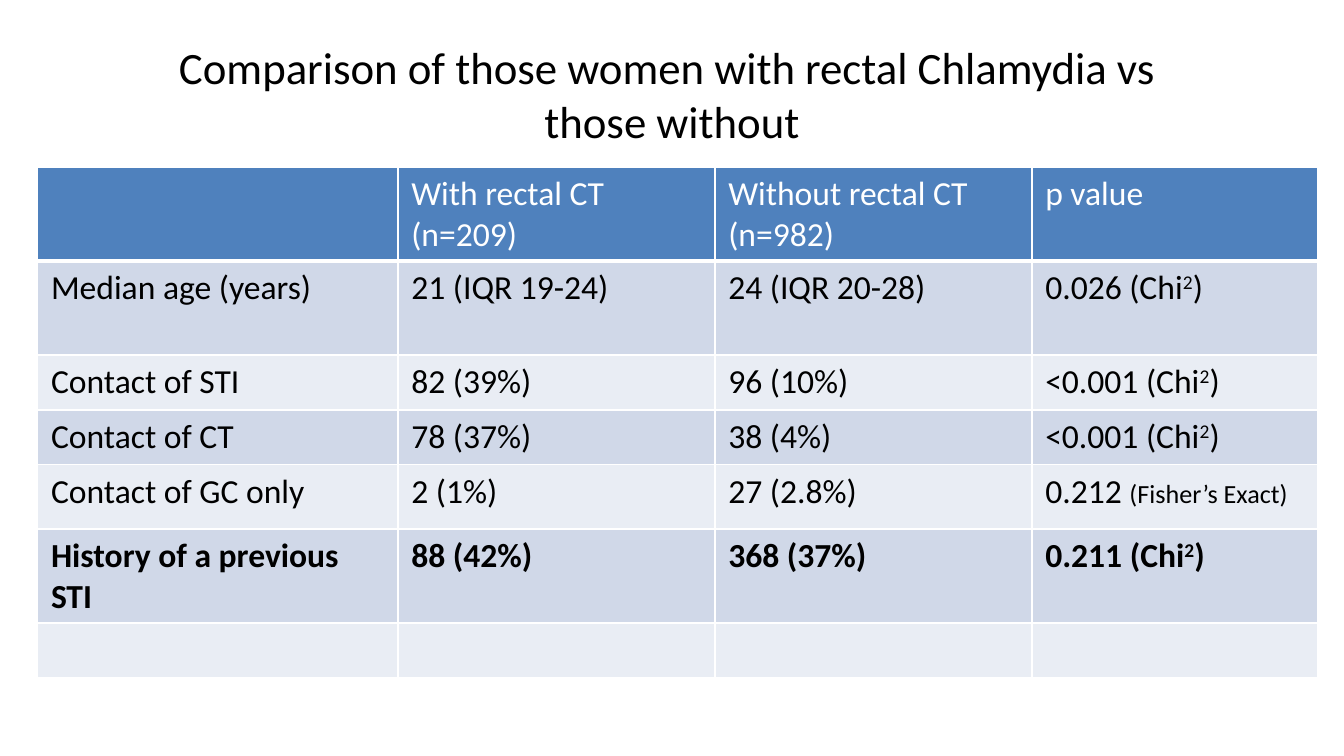
from lxml.etree import SubElement
from pptx import Presentation
from pptx.dml.color import RGBColor
from pptx.enum.text import MSO_ANCHOR, PP_ALIGN
from pptx.oxml.ns import qn
from pptx.util import Cm, Pt

COLOURS = {
    "text": "000000",
    "line": "FFFFFF",
    "header": "4F81BD",
    "header text": "FFFFFF",
    "odd row": "D0D8E8",
    "even row": "E9EDF4",
}
CHI_SQUARED = [("2", {"raised": True}), (")", {})]

TITLE = ["Comparison of those women with rectal Chlamydia vs ", "those without"]
COLUMN_WIDTHS = [6.81, 5.99, 5.99, 5.41]
ROW_HEIGHTS = [1.78, 1.78, 1.03, 1.03, 1.22, 1.78, 1.03]
BOLD_ROW = 5
COMPARISON = [
    ["", "With rectal CT (n=209)", "Without rectal CT (n=982)", "p value"],
    ["Median age (years)", "21 (IQR 19-24)", "24 (IQR 20-28)",
     [("0.026 (Chi", {}), *CHI_SQUARED]],
    ["Contact of STI", "82 (39%)", "96 (10%)",
     [("<0.001 (Chi", {}), *CHI_SQUARED]],
    ["Contact of CT", "78 (37%)", "38 (4%)",
     [("<0.001 (Chi", {}), *CHI_SQUARED]],
    ["Contact of GC only", "2 (1%)", "27 (2.8%)",
     [("0.212 ", {}), ("(Fisher’s Exact)", {"size": 14})]],
    ["History of a previous STI", "88 (42%)", "368 (37%)",
     [("0.211 (Chi", {}), *CHI_SQUARED]],
    ["", "", "", ""],
]


def write(paragraph, text, size=18, colour="text", bold=False, raised=False):
    run = paragraph.add_run()
    run.text = text
    run.font.name = "Calibri"
    run.font.size = Pt(size)
    run.font.bold = bold
    run.font.color.rgb = RGBColor.from_string(COLOURS[colour])
    if raised:
        run._r.get_or_add_rPr().set("baseline", "30000")


def add_borders(cell, bottom):
    """Line all four sides at 1 pt, except the bottom; call before filling."""
    properties = cell._tc.get_or_add_tcPr()
    for side, width in {"L": 1, "R": 1, "T": 1, "B": bottom}.items():
        line = SubElement(properties, qn(f"a:ln{side}"), w=str(Pt(width)))
        fill = SubElement(line, qn("a:solidFill"))
        SubElement(fill, qn("a:srgbClr"), val=COLOURS["line"])


class SlideBuilder:
    def __init__(self, slide):
        self.slide = slide

    def add_title(self, lines, left, top, width, height):
        frame = self.slide.shapes.add_textbox(
            Cm(left), Cm(top), Cm(width), Cm(height)).text_frame
        frame.word_wrap = True
        frame.vertical_anchor = MSO_ANCHOR.MIDDLE
        heading = frame.paragraphs[0]
        heading.alignment = PP_ALIGN.CENTER
        for index, line in enumerate(lines):
            if index:
                heading.add_line_break()
            write(heading, line, size=24)

    def add_comparison(self, rows, left, top):
        table = self.slide.shapes.add_table(
            len(rows), len(COLUMN_WIDTHS), Cm(left), Cm(top),
            Cm(sum(COLUMN_WIDTHS)), Cm(sum(ROW_HEIGHTS))).table
        table.first_row = False
        table.horz_banding = False
        for column, width in zip(table.columns, COLUMN_WIDTHS):
            column.width = Cm(width)
        for index, (row, height) in enumerate(zip(table.rows, ROW_HEIGHTS)):
            row.height = Cm(height)
            for cell, content in zip(row.cells, rows[index]):
                self.fill_cell(cell, content, index)

    def fill_cell(self, cell, content, row):
        is_header = row == 0
        add_borders(cell, bottom=3 if is_header else 1)
        band = "header" if is_header else "odd row" if row % 2 else "even row"
        cell.fill.solid()
        cell.fill.fore_color.rgb = RGBColor.from_string(COLOURS[band])
        if not content:
            return
        parts = [(content, {})] if isinstance(content, str) else content
        for text, formatting in parts:
            write(cell.text_frame.paragraphs[0], text, bold=row == BOLD_ROW,
                  colour="header text" if is_header else "text", **formatting)


def main():
    presentation = Presentation()
    presentation.slide_width = Cm(25.4)
    presentation.slide_height = Cm(14.28)
    builder = SlideBuilder(
        presentation.slides.add_slide(presentation.slide_layouts[6]))
    builder.add_title(TITLE, left=1.27, top=0.58, width=22.86, height=2.39)
    builder.add_comparison(COMPARISON, left=0.71, top=3.15)
    presentation.save("out.pptx")


if __name__ == "__main__":
    main()
